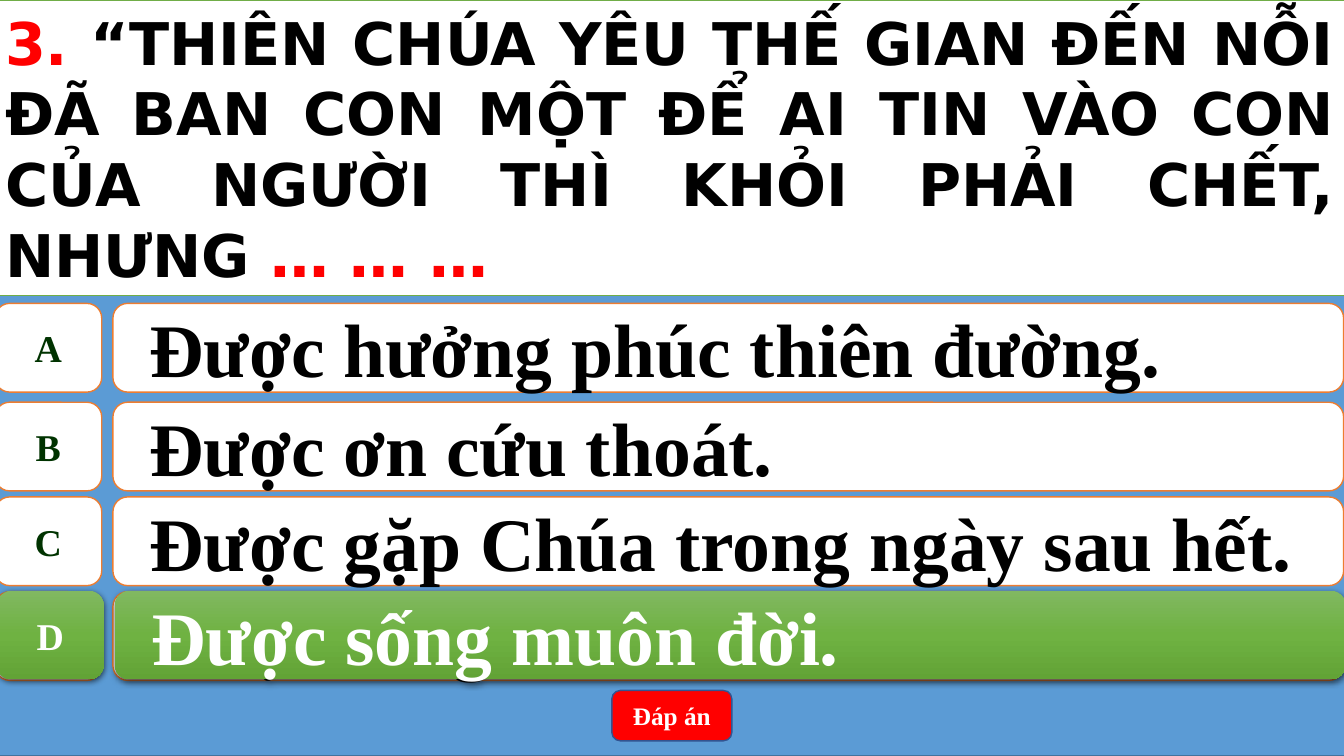
from dataclasses import dataclass

from lxml.etree import SubElement
from pptx import Presentation
from pptx.dml.color import RGBColor as RGB
from pptx.enum.shapes import MSO_SHAPE as SHAPE
from pptx.enum.text import MSO_ANCHOR as ANCHOR, MSO_AUTO_SIZE as AUTO, PP_ALIGN as ALIGN
from pptx.oxml.ns import qn
from pptx.util import Emu, Inches, Pt


@dataclass(frozen=True)
class Theme:
    back: str = "5B9BD5"
    back_line: str = "43739E"
    panel: str = "FFFFFF"
    title_line: str = "70AD47"
    option_line: str = "ED7D31"
    button_line: str = "325491"
    accent: str = "FF0000"
    ink: str = "000000"
    letter: str = "003300"
    light: str = "FFFFFF"
    correct: tuple = ((0, "81B861"), (50, "6FB242"), (100, "62A336"))
    title_font: str = "DejaVu Sans"
    font: str = "Times New Roman"
    title_size: int = 42
    answer_size: int = 54
    letter_size: int = 27
    button_size: int = 18


T = Theme()
LEFT, WIDTH = -0.05, 13.39
QUESTION_H = 2.93
OPTION_H = 0.88
LETTER_W, ANSWER_X = 1.06, 1.17
OPTION_TOPS = (3.01, 3.99, 4.93, 5.87)
OPTIONS = (
    ("A", "Được hưởng phúc thiên đường."),
    ("B", "Được ơn cứu thoát."),
    ("C", "Được gặp Chúa trong ngày sau hết."),
    ("D", "Được sống muôn đời."),
)
QUESTION = (
    ("3. ", T.accent),
    ("“THIÊN CHÚA YÊU THẾ GIAN ĐẾN NỖI ĐÃ BAN CON MỘT ĐỂ AI TIN VÀO CON "
     "CỦA NGƯỜI THÌ KHỎI PHẢI CHẾT, NHƯNG ", T.ink),
    ("… … …", T.accent),
)


def paint(sp, fill, line):
    sp.fill.solid()
    sp.fill.fore_color.rgb = RGB.from_string(fill)
    sp.line.color.rgb = RGB.from_string(line)
    sp.line.width = Pt(1)


def add_box(shapes, kind, box, fill=T.panel, line=T.option_line):
    sp = shapes.add_shape(kind, *map(Inches, box))
    sp.shadow.inherit = False
    paint(sp, fill, line)
    return sp


def write(sp, *runs, size, font=T.font, align=ALIGN.CENTER, wrap=True):
    tf = sp.text_frame
    tf.word_wrap = wrap
    tf.auto_size = AUTO.NONE
    tf.vertical_anchor = ANCHOR.MIDDLE
    p = tf.paragraphs[0]
    p.alignment = align
    for text, color in runs:
        r = p.add_run()
        r.text = text
        r.font.name = font
        r.font.size = Pt(size)
        r.font.bold = True
        r.font.color.rgb = RGB.from_string(color)
    return p


def highlight(sp):
    sp.line.fill.background()
    spPr = sp.fill._xPr
    solid = spPr.find(qn("a:solidFill"))
    grad = SubElement(spPr, qn("a:gradFill"), rotWithShape="1")
    stops = SubElement(grad, qn("a:gsLst"))
    for pos, color in T.correct:
        gs = SubElement(stops, qn("a:gs"), pos=str(pos * 1000))
        SubElement(gs, qn("a:srgbClr"), val=color)
    SubElement(grad, qn("a:lin"), ang="5400000", scaled="0")
    spPr.replace(solid, grad)
    shadow = SubElement(spPr.find(qn("a:effectLst")), qn("a:outerShdw"),
                        blurRad=str(Pt(4.5)), dist=str(Pt(1.5)), dir="5400000",
                        algn="ctr", rotWithShape="0")
    black = SubElement(shadow, qn("a:srgbClr"), val=T.ink)
    SubElement(black, qn("a:alpha"), val="63000")


def add_option(s, letter, answer, left, top, correct=False):
    shapes = s.shapes.add_group_shape().shapes
    tag = add_box(shapes, SHAPE.FLOWCHART_ALTERNATE_PROCESS, (left, top, LETTER_W, OPTION_H))
    bar = add_box(shapes, SHAPE.ROUNDED_RECTANGLE,
                  (left + ANSWER_X, top, WIDTH - ANSWER_X - 0.01, OPTION_H))
    write(tag, (letter, T.light if correct else T.letter), size=T.letter_size, wrap=False)
    p = write(bar, (answer, T.light if correct else T.ink), size=T.answer_size, align=ALIGN.LEFT)
    p.level = 1
    pPr = p._p.get_or_add_pPr()
    pPr.set("marL", str(Inches(0.5)))
    pPr.set("indent", str(Inches(-0.28)))
    if correct:
        highlight(tag)
        highlight(bar)


def add_button(s, box):
    sp = add_box(s.shapes, SHAPE.ROUNDED_RECTANGLE, box, T.accent, T.button_line)
    write(sp, ("Đáp án", T.light), size=T.button_size)


def add_question(s, box):
    sp = s.shapes.title
    sp.left, sp.top, sp.width, sp.height = map(Inches, box)
    paint(sp, T.panel, T.title_line)
    write(sp, *QUESTION, size=T.title_size, font=T.title_font, align=ALIGN.JUSTIFY)
    s.shapes._spTree.append(sp._element)


def build_quiz(prs):
    s = prs.slides.add_slide(prs.slide_layouts[5])
    add_box(s.shapes, SHAPE.RECTANGLE, (LEFT, 0, WIDTH, 7.5), T.back, T.back_line)
    for (letter, answer), top in zip(OPTIONS, OPTION_TOPS):
        add_option(s, letter, answer, LEFT, top)
    add_option(s, *OPTIONS[-1], LEFT + 0.02, OPTION_TOPS[-1] - 0.01, correct=True)
    add_button(s, (6.07, 6.85, 1.19, 0.5))
    add_question(s, (LEFT, 0, WIDTH, QUESTION_H))


def main():
    prs = Presentation()
    prs.slide_width, prs.slide_height = Emu(12192000), Inches(7.5)
    build_quiz(prs)
    prs.save("out.pptx")


if __name__ == "__main__":
    main()
